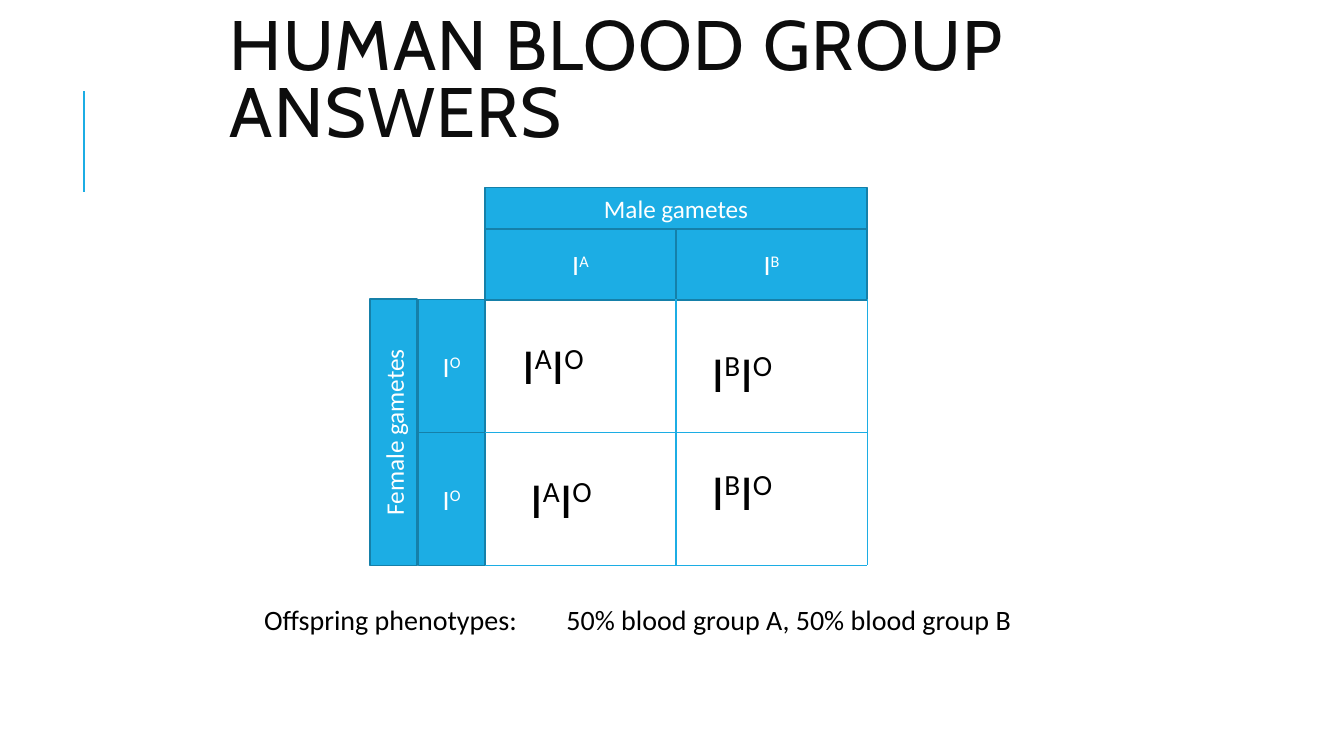
"""Build a slide with the Punnett square answers for human blood groups."""
from dataclasses import dataclass

from lxml.etree import SubElement
from pptx import Presentation
from pptx.dml.color import RGBColor
from pptx.enum.shapes import MSO_CONNECTOR, MSO_SHAPE
from pptx.enum.text import MSO_ANCHOR, MSO_AUTO_SIZE, PP_ALIGN
from pptx.oxml.ns import qn
from pptx.util import Inches, Pt


@dataclass(frozen=True)
class Theme:
    """Colours, fonts and type sizes of the slide."""
    accent: RGBColor = RGBColor.from_string("1CADE4")
    outline: RGBColor = RGBColor.from_string("1580A9")
    title: RGBColor = RGBColor.from_string("0D0D0D")
    body: RGBColor = RGBColor.from_string("000000")
    light: RGBColor = RGBColor.from_string("FFFFFF")
    title_font: str = "Cabin"
    body_font: str = "Calibri"
    title_size: int = 50
    genotype_size: int = 36
    allele_size: int = 20
    label_size: int = 18


theme = Theme()


def write_text(shape, text, size, color, font=theme.body_font, align=PP_ALIGN.LEFT,
               anchor=MSO_ANCHOR.TOP, spacing=None, tracking=0, vertical=None):
    """Write text in a shape; every second part between ^ marks is superscript."""
    frame = shape.text_frame
    frame.word_wrap = True
    frame.auto_size = MSO_AUTO_SIZE.NONE
    frame.vertical_anchor = anchor
    if vertical:
        frame._txBody.bodyPr.set("vert", vertical)
    paragraph = frame.paragraphs[0]
    paragraph.alignment = align
    paragraph.line_spacing = spacing
    for index, part in enumerate(text.split("^")):
        run = paragraph.add_run()
        run.text = part
        run.font.name = font
        run.font.size = Pt(size)
        run.font.color.rgb = color
        if index % 2:
            run.font._element.set("baseline", "30000")
        if tracking:
            run.font._element.set("spc", str(tracking * 100))


def add_line(x1, y1, x2, y2, width):
    """Draw a straight accent line without a shadow."""
    line = slide.shapes.add_connector(
        MSO_CONNECTOR.STRAIGHT, Inches(x1), Inches(y1), Inches(x2), Inches(y2))
    line.line.color.rgb = theme.accent
    line.line.width = Pt(width)
    SubElement(line._element.spPr, qn("a:effectLst"))


presentation = Presentation()
presentation.slide_width = Inches(13.33)
presentation.slide_height = Inches(7.5)
slide = presentation.slides.add_slide(presentation.slide_layouts[5])

add_line(0.83, 1.9, 0.83, 0.9, 1.5)

title = slide.shapes.title
title.left, title.top, title.width, title.height = map(Inches, (2.18, 0.21, 9, 1.25))
write_text(title, "HUMAN BLOOD GROUP ANSWERS", theme.title_size, theme.title,
           font=theme.title_font, anchor=MSO_ANCHOR.MIDDLE, spacing=0.8, tracking=1)

grid_left, grid_top = 4.81, 2.97
cell_width, cell_height = 1.895, 1.32
grid_right = grid_left + 2 * cell_width
grid_bottom = grid_top + 2 * cell_height

headers = [("Male gametes", grid_left, 1.86, 2 * cell_width, 0.41, theme.label_size, None)]
for column, allele in enumerate(("I^A", "I^B")):
    headers.append((allele, grid_left + column * cell_width, 2.27,
                    cell_width, 0.71, theme.allele_size, None))
for row in range(2):
    headers.append(("I^O", 4.15, grid_top + row * cell_height,
                    0.66, cell_height, theme.allele_size, None))
headers.append(("Female gametes", 3.67, grid_top, 0.47, 2 * cell_height,
                theme.label_size, "vert270"))

for text, left, top, width, height, size, vertical in headers:
    header = slide.shapes.add_shape(
        MSO_SHAPE.RECTANGLE, Inches(left), Inches(top), Inches(width), Inches(height))
    header.shadow.inherit = False
    header.fill.solid()
    header.fill.fore_color.rgb = theme.accent
    header.line.color.rgb = theme.outline
    header.line.width = Pt(1.25)
    write_text(header, text, size, theme.light, align=PP_ALIGN.CENTER,
               anchor=MSO_ANCHOR.MIDDLE, vertical=vertical)

for step in (1, 2):
    x = grid_left + step * cell_width
    y = grid_top + step * cell_height
    add_line(x, grid_top, x, grid_bottom, 0.75)
    add_line(grid_left, y, grid_right, y, 0.75)

answers = [
    ("I^A^I^O", 5.08, 3.27, 1.41, 0.71, theme.genotype_size),
    ("I^A^I^O", 5.16, 4.59, 1.41, 0.71, theme.genotype_size),
    ("I^B^I^O", 6.96, 3.34, 1.41, 0.71, theme.genotype_size),
    ("I^B^I^O", 6.96, 4.52, 1.41, 0.71, theme.genotype_size),
    ("Offspring phenotypes: \t50% blood group A, 50% blood group B",
     2.52, 5.93, 9.39, 0.44, theme.allele_size),
]
for text, left, top, width, height, size in answers:
    box = slide.shapes.add_textbox(Inches(left), Inches(top), Inches(width), Inches(height))
    write_text(box, text, size, theme.body)

presentation.save("out.pptx")
